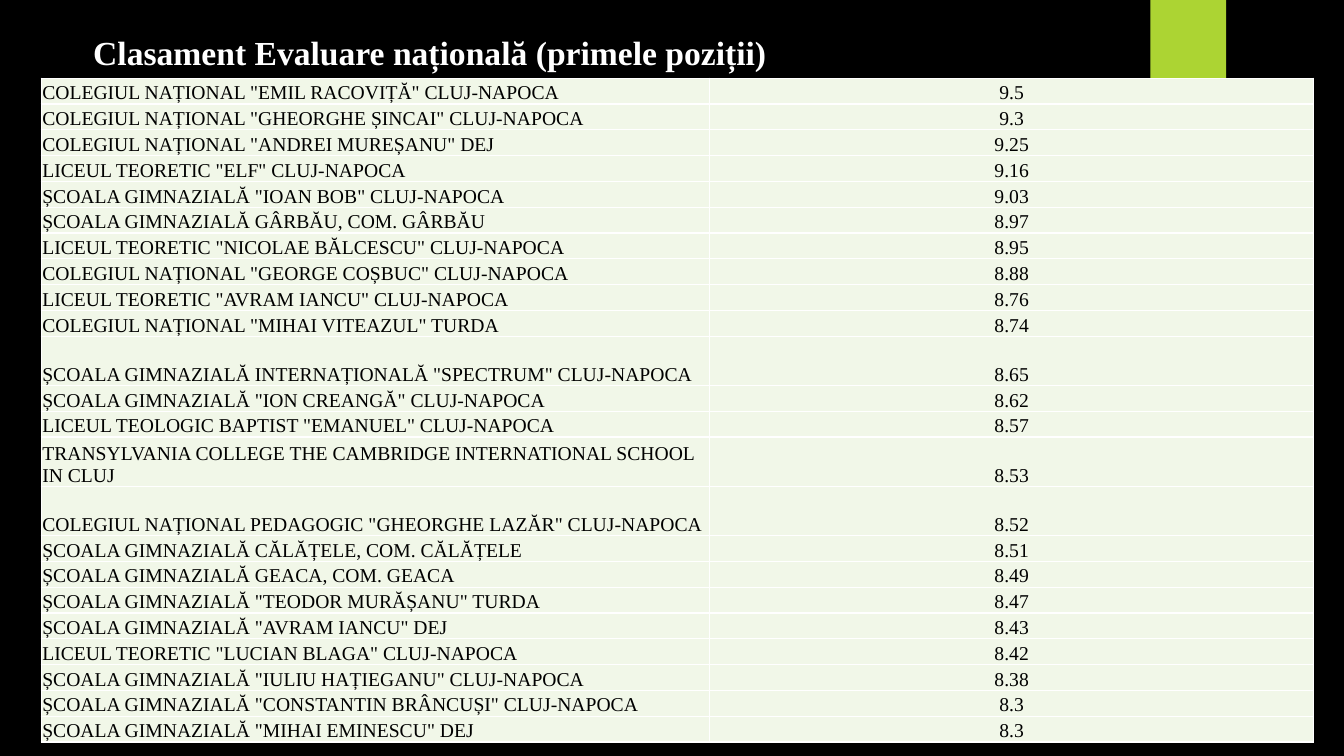
import lxml.etree
import pptx
import pptx.dml.color
import pptx.enum.shapes
import pptx.enum.text
import pptx.oxml.ns
import pptx.util

Pt = pptx.util.Pt
FONT = "Times New Roman"
BLACK, WHITE, GREEN, PALE_GREEN = "000000", "FFFFFF", "ACD433", "F1F7E8"
ROW_HEIGHT, TALL_ROW_HEIGHT = 18.45, 35.2
TALL_ROWS = (10, 13, 14)

RANKING = [
    ('COLEGIUL NAȚIONAL "EMIL RACOVIȚĂ" CLUJ-NAPOCA', "9.5"),
    ('COLEGIUL NAȚIONAL "GHEORGHE ȘINCAI" CLUJ-NAPOCA', "9.3"),
    ('COLEGIUL NAȚIONAL "ANDREI MUREȘANU" DEJ', "9.25"),
    ('LICEUL TEORETIC "ELF" CLUJ-NAPOCA', "9.16"),
    ('ȘCOALA GIMNAZIALĂ "IOAN BOB" CLUJ-NAPOCA', "9.03"),
    ('ȘCOALA GIMNAZIALĂ GÂRBĂU, COM. GÂRBĂU', "8.97"),
    ('LICEUL TEORETIC "NICOLAE BĂLCESCU" CLUJ-NAPOCA', "8.95"),
    ('COLEGIUL NAȚIONAL "GEORGE COȘBUC" CLUJ-NAPOCA', "8.88"),
    ('LICEUL TEORETIC "AVRAM IANCU" CLUJ-NAPOCA', "8.76"),
    ('COLEGIUL NAȚIONAL "MIHAI VITEAZUL" TURDA', "8.74"),
    ('ȘCOALA GIMNAZIALĂ INTERNAȚIONALĂ "SPECTRUM" CLUJ-NAPOCA', "8.65"),
    ('ȘCOALA GIMNAZIALĂ "ION CREANGĂ" CLUJ-NAPOCA', "8.62"),
    ('LICEUL TEOLOGIC BAPTIST "EMANUEL" CLUJ-NAPOCA', "8.57"),
    ("TRANSYLVANIA COLLEGE THE CAMBRIDGE INTERNATIONAL SCHOOL IN CLUJ", "8.53"),
    ('COLEGIUL NAȚIONAL PEDAGOGIC "GHEORGHE LAZĂR" CLUJ-NAPOCA', "8.52"),
    ("ȘCOALA GIMNAZIALĂ CĂLĂȚELE, COM. CĂLĂȚELE", "8.51"),
    ("ȘCOALA GIMNAZIALĂ GEACA, COM. GEACA", "8.49"),
    ('ȘCOALA GIMNAZIALĂ "TEODOR MURĂȘANU" TURDA', "8.47"),
    ('ȘCOALA GIMNAZIALĂ "AVRAM IANCU" DEJ', "8.43"),
    ('LICEUL TEORETIC "LUCIAN BLAGA" CLUJ-NAPOCA', "8.42"),
    ('ȘCOALA GIMNAZIALĂ "IULIU HAȚIEGANU" CLUJ-NAPOCA', "8.38"),
    ('ȘCOALA GIMNAZIALĂ "CONSTANTIN BRÂNCUȘI" CLUJ-NAPOCA', "8.3"),
    ('ȘCOALA GIMNAZIALĂ "MIHAI EMINESCU" DEJ', "8.3"),
]


def set_fill(fill, color):
    fill.solid()
    fill.fore_color.rgb = pptx.dml.color.RGBColor.from_string(color)


def write_text(text_frame, text, size=14, color=BLACK, bold=False, align="LEFT"):
    paragraph = text_frame.paragraphs[0]
    paragraph.alignment = getattr(pptx.enum.text.PP_ALIGN, align)
    run = paragraph.add_run()
    run.text = text
    run.font.name = FONT
    run.font.size = Pt(size)
    run.font.bold = bold
    set_fill(run.font.fill, color)


def set_borders(cell, color, width):
    properties = cell._tc.get_or_add_tcPr()
    qn = pptx.oxml.ns.qn
    for side in ("lnL", "lnR", "lnT", "lnB"):
        line = lxml.etree.SubElement(properties, qn(f"a:{side}"), w=str(Pt(width)))
        fill = lxml.etree.SubElement(line, qn("a:solidFill"))
        lxml.etree.SubElement(fill, qn("a:srgbClr"), val=color)


def add_accent(slide, left, top, width, height):
    accent = slide.shapes.add_shape(
        pptx.enum.shapes.MSO_SHAPE.RECTANGLE, Pt(left), Pt(top), Pt(width), Pt(height))
    accent.shadow.inherit = False
    set_fill(accent.fill, GREEN)
    accent.line.fill.background()


def add_title(slide, left, top, width, height):
    title = slide.shapes.add_textbox(Pt(left), Pt(top), Pt(width), Pt(height))
    title.text_frame.word_wrap = True
    title.text_frame.auto_size = pptx.enum.text.MSO_AUTO_SIZE.SHAPE_TO_FIT_TEXT
    write_text(title.text_frame, "Clasament Evaluare națională (primele poziții)",
               size=24, color=WHITE, bold=True)


def style_cell(cell, text, align):
    cell.margin_left = cell.margin_right = cell.margin_top = Pt(0.72)
    cell.margin_bottom = 0
    cell.vertical_anchor = pptx.enum.text.MSO_ANCHOR.BOTTOM
    set_borders(cell, WHITE, 1)
    set_fill(cell.fill, PALE_GREEN)
    write_text(cell.text_frame, text, align=align)


def add_ranking(slide, left, top, width, name_width):
    heights = [TALL_ROW_HEIGHT if index in TALL_ROWS else ROW_HEIGHT
               for index in range(len(RANKING))]
    table = slide.shapes.add_table(
        len(RANKING), 2, Pt(left), Pt(top), Pt(width), Pt(sum(heights))).table
    table.first_row = table.horz_banding = False
    table.columns[0].width = Pt(name_width)
    table.columns[1].width = Pt(width - name_width)
    for row, height, (school, score) in zip(table.rows, heights, RANKING):
        row.height = Pt(height)
        style_cell(row.cells[0], school, "LEFT")
        style_cell(row.cells[1], score, "CENTER")


def main():
    presentation = pptx.Presentation()
    presentation.slide_width, presentation.slide_height = Pt(960), Pt(540)
    slide = presentation.slides.add_slide(presentation.slide_layouts[6])
    set_fill(slide.background.fill, BLACK)
    add_accent(slide, 821.75, 0, 54, 90)
    add_title(slide, 59.5, 19.5, 747.5, 36)
    add_ranking(slide, 29.5, 55.9, 908.8, 477.5)
    presentation.save("out.pptx")


if __name__ == "__main__":
    main()
